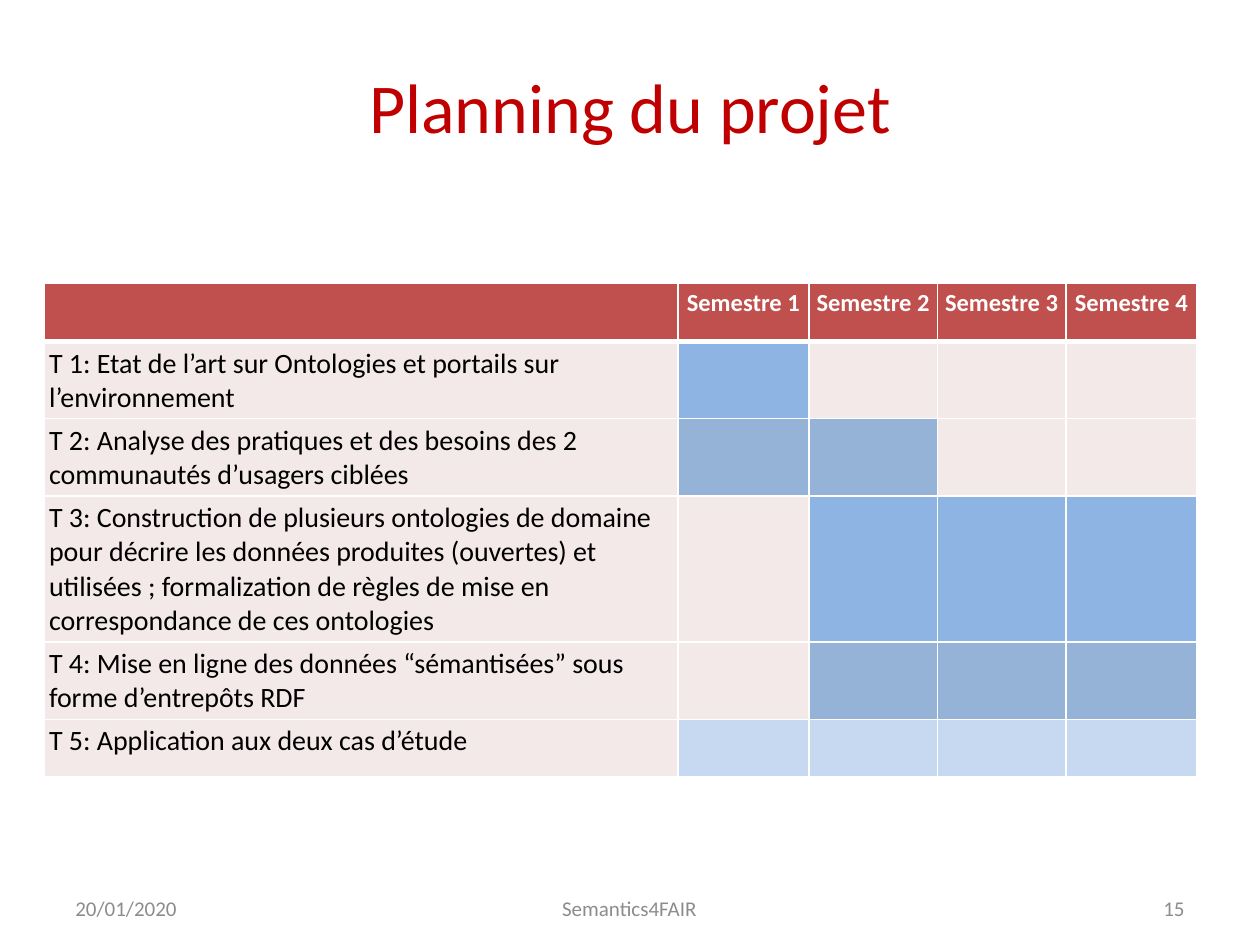
import pptx
import pptx.dml.color
import pptx.enum.text
import pptx.oxml
import pptx.oxml.ns
import pptx.util

Inches = pptx.util.Inches
ALIGN = pptx.enum.text.PP_ALIGN
FONT = "Calibri"
RED, PALE, WHITE, GREY = "C0504D", "F4E9E9", "FFFFFF", "8C8C8C"
BLUE, STEEL, LIGHT = "8EB4E3", "95B3D7", "C6D9F1"


def color(value):
    return pptx.dml.color.RGBColor.from_string(value)


def write(frame, text, size, text_color, align, bold=False):
    """Put one formatted run in the first paragraph of a text frame."""
    frame.word_wrap = True
    paragraph = frame.paragraphs[0]
    paragraph.alignment = align
    run = paragraph.add_run()
    run.text = text
    run.font.name = FONT
    run.font.size = pptx.util.Pt(size)
    run.font.bold = bold
    run.font.color.rgb = color(text_color)


presentation = pptx.Presentation()
presentation.slide_width = Inches(10)
presentation.slide_height = Inches(7.5)
slide = presentation.slides.add_slide(presentation.slide_layouts[6])

# Title and footer: left, top, width, height, text, size, color, alignment
footer_top, footer_height = 7.06, 0.29
texts = [
    (0.5, 0.21, 9, 1.25, "Planning du projet", 40, "C00000", ALIGN.CENTER),
    (0.5, footer_top, 2.33, footer_height, "20/01/2020", 12, GREY, ALIGN.LEFT),
    (2.95, footer_top, 4.09, footer_height, "Semantics4FAIR", 12, GREY, ALIGN.CENTER),
    (7.17, footer_top, 2.33, footer_height, "15", 12, GREY, ALIGN.RIGHT),
]
for left, top, width, height, text, size, text_color, align in texts:
    box = slide.shapes.add_textbox(Inches(left), Inches(top), Inches(width), Inches(height))
    box.text_frame.vertical_anchor = pptx.enum.text.MSO_ANCHOR.MIDDLE
    write(box.text_frame, text, size, text_color, align)

# Schedule: task, row height, bar color, first and last semester
tasks = [
    ("T 1: Etat de l’art sur Ontologies et portails sur l’environnement", 0.61, BLUE, 1, 1),
    ("T 2: Analyse des pratiques et des besoins des 2 communautés d’usagers ciblées",
     0.61, STEEL, 1, 2),
    ("T 3: Construction de plusieurs ontologies de domaine pour décrire les données "
     "produites (ouvertes) et utilisées ; formalization de règles de mise en "
     "correspondance de ces ontologies", 1.16, BLUE, 2, 4),
    ("T 4: Mise en ligne des données “sémantisées” sous forme d’entrepôts RDF",
     0.61, STEEL, 2, 4),
    ("T 5: Application aux deux cas d’étude", 0.46, LIGHT, 1, 4),
]
column_widths = [5.03, 1.04, 1.02, 1.02, 1.04]
row_heights = [0.46] + [task[1] for task in tasks]
table = slide.shapes.add_table(
    len(row_heights), len(column_widths), Inches(0.35), Inches(2.25),
    Inches(sum(column_widths)), Inches(sum(row_heights))).table
table.horz_banding = False
for column, width in zip(table.columns, column_widths):
    column.width = Inches(width)
for row, height in zip(table.rows, row_heights):
    row.height = Inches(height)

# White cell borders, thicker between the header and the tasks
for row_index, row in enumerate(table.rows):
    for cell in row.cells:
        properties = cell._tc.get_or_add_tcPr()
        for side in "LRTB":
            under_header = (row_index, side) in [(0, "B"), (1, "T")]
            line_width = pptx.util.Pt(3 if under_header else 1)
            properties.append(pptx.oxml.parse_xml(
                f'<a:ln{side} {pptx.oxml.ns.nsdecls("a")} w="{line_width}"><a:solidFill>'
                f'<a:srgbClr val="{WHITE}"/></a:solidFill></a:ln{side}>'))
        cell.fill.solid()
        cell.fill.fore_color.rgb = color(PALE if row_index else RED)

semesters = range(1, len(column_widths))
for semester in semesters:
    write(table.cell(0, semester).text_frame, f"Semestre {semester}", 14, WHITE,
          ALIGN.CENTER, bold=True)
for row_index, (name, height, bar_color, first, last) in enumerate(tasks, start=1):
    write(table.cell(row_index, 0).text_frame, name, 16, "000000", ALIGN.LEFT)
    for semester in range(first, last + 1):
        table.cell(row_index, semester).fill.fore_color.rgb = color(bar_color)

for cell in table.iter_cells():
    if cell.text_frame.text:
        cell.margin_left = cell.margin_right = Inches(0.04)
        cell.margin_top = cell.margin_bottom = Inches(0.04)

presentation.save("out.pptx")
